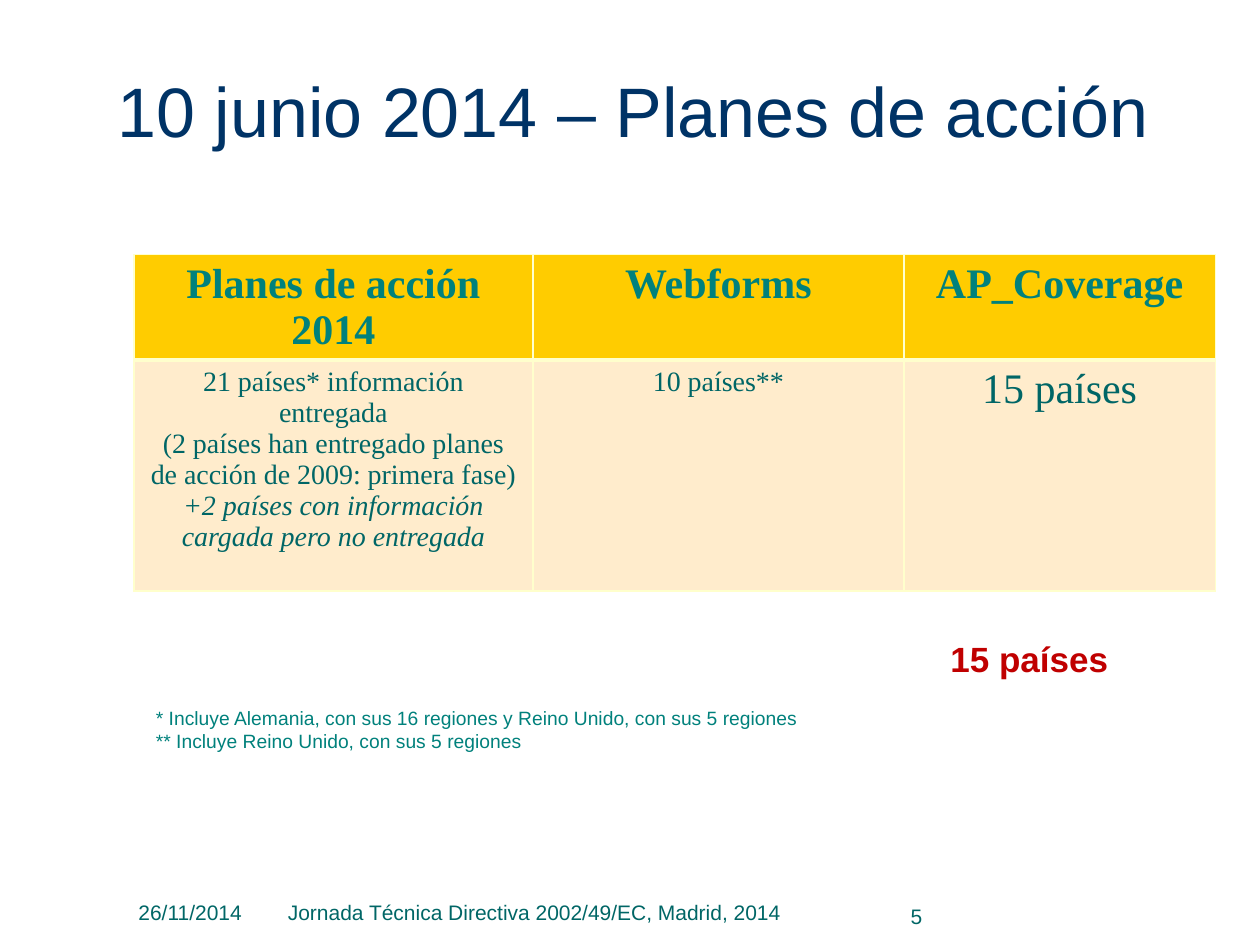
from lxml import etree
from pptx import Presentation
from pptx.dml.color import RGBColor
from pptx.enum.text import MSO_ANCHOR, PP_ALIGN
from pptx.oxml.ns import qn
from pptx.util import Pt

LEFT, MID, RIGHT = PP_ALIGN.LEFT, PP_ALIGN.CENTER, PP_ALIGN.RIGHT
TOP, BASE = MSO_ANCHOR.TOP, MSO_ANCHOR.BOTTOM

# Theme: colours and type styles
SANS, SERIF = "Arial", "Times New Roman"
THEME = {
    "gold": "FFCC00", "cream": "FFECCC", "rule": "FFFFCC",
    "title": dict(name=SANS, size=40, color="003366"),
    "head": dict(name=SERIF, size=24, color="00817C", bold=True),
    "cell": dict(name=SERIF, size=16, color="006666", bold=False),
    "big": dict(name=SERIF, size=24, color="006666", bold=False),
    "slant": dict(name=SERIF, size=16, color="006666", bold=False, italic=True),
    "foot": dict(name=SANS, size=12, color="006666"),
    "note": dict(name=SANS, size=11, color="00817C"),
    "total": dict(name=SANS, size=20, color="C00000", bold=True),
}

# Content: every line is (text, style)
TITLE = [("10 junio 2014 – Planes de acción", "title")]
HEADS = ["Planes de acción 2014", "Webforms", "AP_Coverage"]
BODY = [
    [("21 países* información entregada", "cell"),
     ("(2 países han entregado planes de acción de 2009: primera fase)", "cell"),
     ("+2 países con información cargada pero no entregada", "slant")],
    [("10 países**", "cell")],
    [("15 países", "big")],
]
NOTES = [
    ("* Incluye Alemania, con sus 16 regiones y Reino Unido, con sus 5 regiones", "note"),
    ("** Incluye Reino Unido, con sus 5 regiones", "note"),
]
# Boxes: lines, (left, top, width, height), alignment, anchor
BOXES = [
    ([("Jornada Técnica Directiva 2002/49/EC, Madrid, 2014", "foot")],
     (156, 510, 299, 22), MID, BASE),
    ([("5", "foot")], (474, 510, 60, 24), RIGHT, BASE),
    ([("26/11/2014", "foot")], (72, 510, 84, 22), LEFT, BASE),
    (NOTES, (82, 400, 595, 48), LEFT, TOP),
    ([("15 países", "total")], (536, 361, 148, 32), LEFT, TOP),
]
COLS = [228, 212, 178]
ROWS = [60, 132]
ORIGIN = (76.5, 145.5)


def write(frame, lines, align):
    for i, (text, style) in enumerate(lines):
        para = frame.paragraphs[0] if i == 0 else frame.add_paragraph()
        para.alignment = align
        run = para.add_run()
        run.text = text
        for key, val in THEME[style].items():
            if key == "color":
                run.font.color.rgb = RGBColor.from_string(val)
            else:
                setattr(run.font, key, Pt(val) if key == "size" else val)


def place(shape, box):
    for key, val in zip(("left", "top", "width", "height"), box):
        setattr(shape, key, Pt(val))


def edge(cell, sides):
    props = cell._tc.get_or_add_tcPr()
    for side, width in sides.items():
        line = etree.SubElement(props, qn("a:ln" + side), w=str(Pt(width)))
        fill = etree.SubElement(line, qn("a:solidFill"))
        etree.SubElement(fill, qn("a:srgbClr"), val=THEME["rule"])


deck = Presentation()
deck.slide_width, deck.slide_height = Pt(720), Pt(540)
slide = deck.slides.add_slide(deck.slide_layouts[5])

# Title
head = slide.shapes.title
place(head, (60, 16, 612, 74))
head.text_frame.vertical_anchor = BASE
write(head.text_frame, TITLE, LEFT)

# Table
size = (sum(COLS), sum(ROWS))
grid = slide.shapes.add_table(len(ROWS), len(COLS), *map(Pt, ORIGIN + size)).table
for col, width in zip(grid.columns, COLS):
    col.width = Pt(width)
for row, height in zip(grid.rows, ROWS):
    row.height = Pt(height)
bands = [
    ([[(text, "head")] for text in HEADS], "gold", dict(L=1, R=1, T=1, B=3)),
    (BODY, "cream", dict(L=1, R=1, T=3, B=1)),
]
for r, (cells, tint, sides) in enumerate(bands):
    for c, lines in enumerate(cells):
        cell = grid.cell(r, c)
        edge(cell, sides)
        cell.fill.solid()
        cell.fill.fore_color.rgb = RGBColor.from_string(THEME[tint])
        write(cell.text_frame, lines, MID)

# Footer, notes and total
for lines, box, align, anchor in BOXES:
    frame = slide.shapes.add_textbox(*map(Pt, box)).text_frame
    frame.word_wrap = True
    frame.vertical_anchor = anchor
    write(frame, lines, align)

deck.save("out.pptx")
